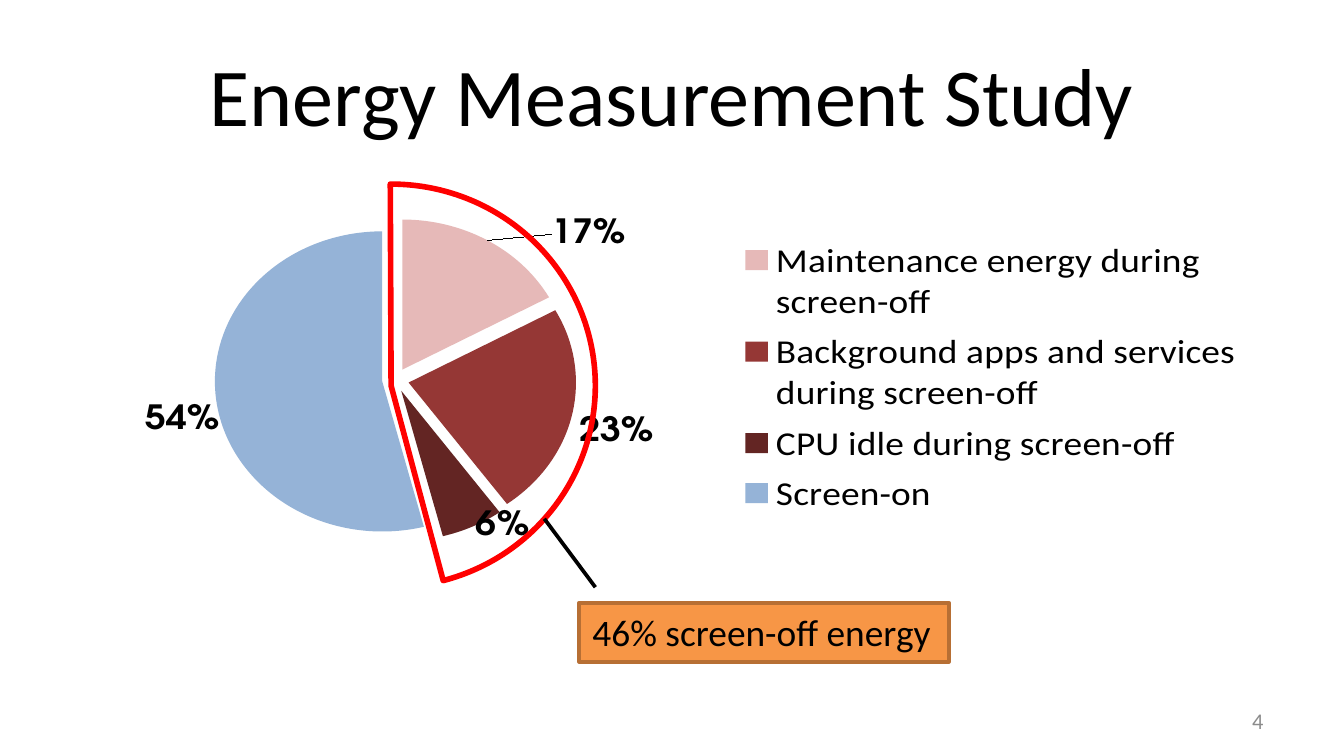
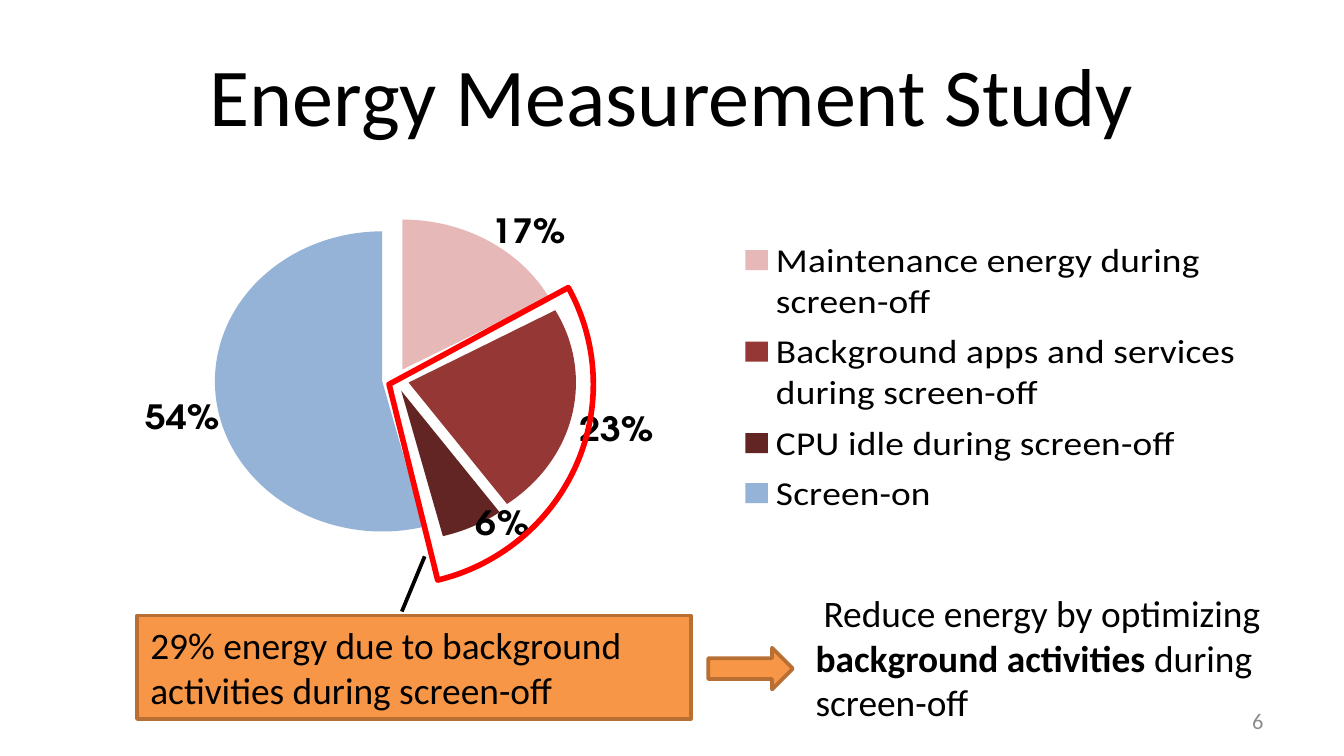
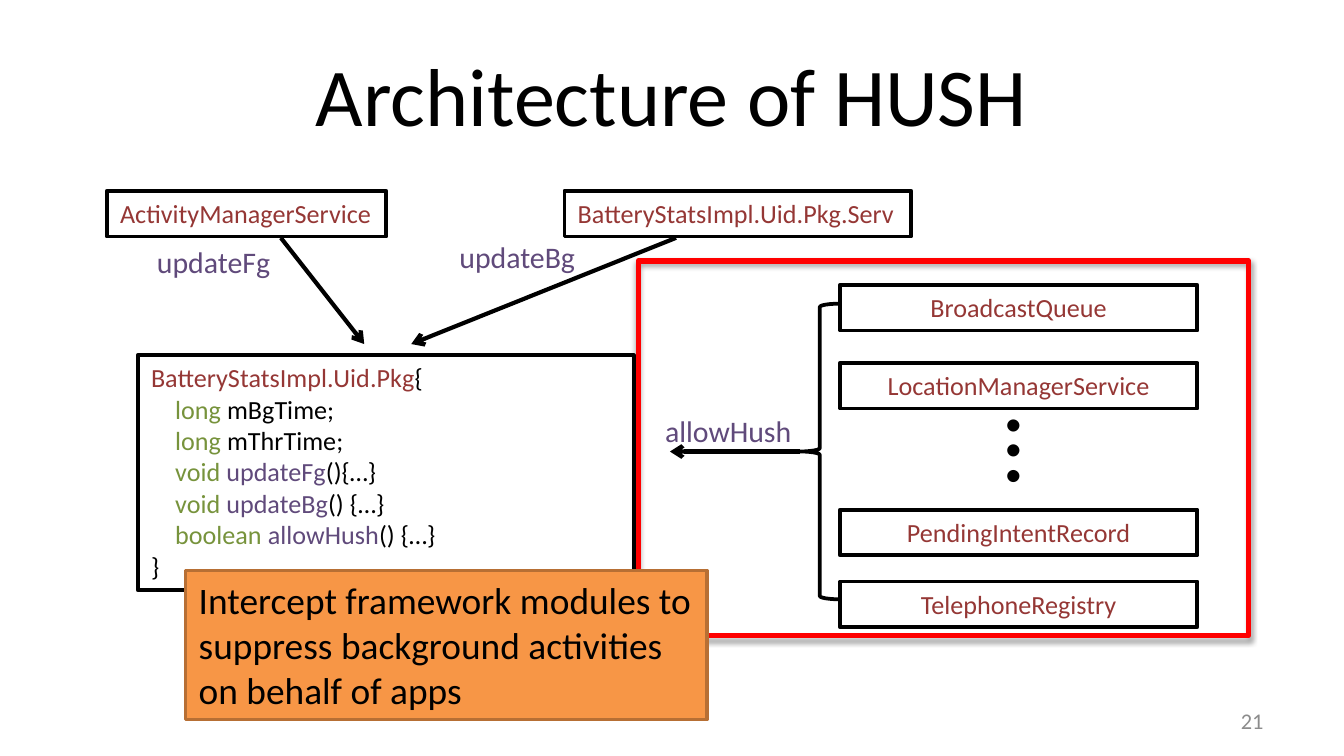
import lxml.etree
import pptx
import pptx.chart.data
import pptx.dml.color
import pptx.enum.chart
import pptx.enum.shapes
import pptx.enum.text
import pptx.oxml
import pptx.oxml.ns
import pptx.util

SHAPE = pptx.enum.shapes.MSO_SHAPE
ALIGN = pptx.enum.text.PP_ALIGN
ANCHOR = pptx.enum.text.MSO_ANCHOR
qn = pptx.oxml.ns.qn

COLORS = {
    "ink": "000000", "paper": "FFFFFF", "number": "8C8C8C",
    "callout": "F79646", "callout_edge": "B76F34", "highlight": "FF0000",
    "class": "953735", "method": "604A7B", "type": "77933C",
    "maintenance": "E6B9B8", "background": "953735", "idle": "632523", "screen_on": "95B3D7",
}
FONT = "Calibri"
LABEL_FONT = "TeX Gyre Adventor"
CELL = 0.1
COLUMNS, ROWS = 100, 56.25
TITLE_AREA = (5, 2.3, 90, 9.4)
NUMBER_AREA = (71.7, 52.1, 23.3, 3)
ENERGY = [
    ("Maintenance energy during screen-off", 17, "maintenance"),
    ("Background apps and services during screen-off", 23, "background"),
    ("CPU idle during screen-off", 6, "idle"),
    ("Screen-on", 54, "screen_on"),
]


def grid(*cells):
    return [pptx.util.Inches(cell * CELL) for cell in cells]


def color(name):
    return pptx.dml.color.RGBColor.from_string(COLORS[name])


def style_font(font, size, ink="ink", bold=False, name=FONT):
    font.name = name
    font.size = pptx.util.Pt(size)
    font.bold = bold
    font.color.rgb = color(ink)


def paint(shape, fill=None, edge=None, width=2):
    if fill:
        shape.fill.solid()
        shape.fill.fore_color.rgb = color(fill)
    else:
        shape.fill.background()
    if edge:
        shape.line.color.rgb = color(edge)
        shape.line.width = pptx.util.Pt(width)
    else:
        shape.line.fill.background()


def write(box, text, size, ink="ink", align=ALIGN.LEFT, wrap=True, anchor=ANCHOR.TOP):
    frame = box.text_frame
    frame.text = text
    frame.word_wrap = wrap
    frame.vertical_anchor = anchor
    para = frame.paragraphs[0]
    para.alignment = align
    for span in para.runs:
        style_font(span.font, size, ink)


def write_spans(para, spans, size):
    para.alignment = ALIGN.LEFT
    for text, ink, bold in spans:
        span = para.add_run()
        span.text = text
        style_font(span.font, size, ink, bold)


def indent(para, **lengths):
    properties = para._p.get_or_add_pPr()
    for name, inches in lengths.items():
        properties.set(name, str(pptx.util.Inches(inches)))


def add_shape(page, kind, area, fill=None, edge="ink", width=2):
    shape = page.shapes.add_shape(kind, *grid(*area))
    shape.shadow.inherit = False
    paint(shape, fill, edge, width)
    return shape


def add_label(page, area, text, size, ink="ink", **layout):
    box = page.shapes.add_textbox(*grid(*area))
    write(box, text, size, ink, **layout)
    return box


def add_callout(page, area, text, wrap=True):
    box = add_shape(page, SHAPE.RECTANGLE, area, "callout", "callout_edge")
    write(box, text, 20, wrap=wrap)


def add_class_box(page, area, name, align=ALIGN.LEFT, wrap=False):
    box = add_shape(page, SHAPE.RECTANGLE, area, "paper")
    write(box, name, 14, "class", align, wrap)


def add_wedge(page, area, start, end):
    wedge = add_shape(page, SHAPE.PIE, area, edge="highlight", width=3)
    wedge.adjustments[0] = start
    wedge.adjustments[1] = end


def add_line(page, start, end, width=2, arrow=False):
    line = page.shapes.add_connector(
        pptx.enum.shapes.MSO_CONNECTOR.STRAIGHT, *grid(*start, *end))
    line.line.color.rgb = color("ink")
    line.line.width = pptx.util.Pt(width)
    if arrow:
        tail = lxml.etree.SubElement(line.line._get_or_add_ln(), qn("a:tailEnd"))
        tail.set("type", "arrow")
    lxml.etree.SubElement(line._element.spPr, qn("a:effectLst"))
    return line


def add_shadow(shape):
    effects = shape._element.spPr.find(qn("a:effectLst"))
    shadow = lxml.etree.SubElement(
        effects, qn("a:outerShdw"), blurRad=str(pptx.util.Pt(3.1)),
        dist=str(pptx.util.Pt(1.8)), dir="5400000", rotWithShape="0")
    tint = lxml.etree.SubElement(shadow, qn("a:srgbClr"), val=COLORS["ink"])
    lxml.etree.SubElement(tint, qn("a:alpha"), val="35000")


def add_page(deck, title, number):
    page = deck.slides.add_slide(deck.slide_layouts[5])
    heading = page.shapes.title
    heading.left, heading.top, heading.width, heading.height = grid(*TITLE_AREA)
    write(heading, title, 44, align=ALIGN.CENTER, anchor=ANCHOR.MIDDLE)
    add_label(page, NUMBER_AREA, str(number), 12, "number",
              align=ALIGN.RIGHT, anchor=ANCHOR.MIDDLE)
    return page


def chart_layout(**values):
    layout = pptx.oxml.parse_xml(
        '<c:layout xmlns:c="http://schemas.openxmlformats.org/drawingml/2006/chart">'
        "<c:manualLayout/></c:layout>")
    for name, value in values.items():
        lxml.etree.SubElement(layout[0], qn("c:" + name)).set("val", str(value))
    return layout


def place_plot(chart):
    plot_area = chart._chartSpace.chart.plotArea
    for layout in plot_area.findall(qn("c:layout")):
        plot_area.remove(layout)
    plot_area.insert(0, chart_layout(
        layoutTarget="inner", xMode="edge", yMode="edge", x=0.096, y=0, w=0.328, h=1))


def place_legend(legend):
    for layout in legend._element.findall(qn("c:layout")):
        legend._element.remove(layout)
    legend._element.find(qn("c:legendPos")).addnext(chart_layout(
        xMode="edge", yMode="edge", x=0.54, y=0.04, w=0.44, h=0.9))


def explode(parent, before, percent):
    explosion = parent.makeelement(qn("c:explosion"), {"val": str(percent)})
    parent.find(qn(before)).addprevious(explosion)


def shift_label(series, index, x, y):
    label = series.points[index].data_label
    style_font(label.font, 20, bold=True, name=LABEL_FONT)
    label.position = pptx.enum.chart.XL_LABEL_POSITION.OUTSIDE_END
    for element in series._element.find(qn("c:dLbls")).findall(qn("c:dLbl")):
        position = element.find(qn("c:idx"))
        if position.get("val") == str(index):
            element.find(qn("c:showVal")).set("val", "0")
            element.find(qn("c:showPercent")).set("val", "1")
            position.addnext(chart_layout(x=x, y=y))


def add_energy_chart(page, label_shifts):
    data = pptx.chart.data.CategoryChartData()
    data.categories = [name for name, _, _ in ENERGY]
    data.add_series("Series 1", [share for _, share, _ in ENERGY])
    chart = page.shapes.add_chart(
        pptx.enum.chart.XL_CHART_TYPE.PIE, *grid(6.4, 15.1, 88.6, 26.9), data).chart
    style_font(chart.font, 18)
    chart.has_title = False
    chart.has_legend = True
    chart.legend.position = pptx.enum.chart.XL_LEGEND_POSITION.RIGHT
    chart.legend.include_in_layout = False
    style_font(chart.legend.font, 20)
    place_plot(chart)
    place_legend(chart.legend)

    plot = chart.plots[0]
    plot.vary_by_categories = True
    series = plot.series[0]
    for index, (_, _, ink) in enumerate(ENERGY):
        fill = series.points[index].format.fill
        fill.solid()
        fill.fore_color.rgb = color(ink)
    for point in series._element.findall(qn("c:dPt")):
        explode(point, "c:spPr", 8)
    explode(series._element, "c:dPt", 8)

    labels = series.data_labels
    labels.show_value = False
    labels.show_percentage = True
    labels.number_format = "0%"
    labels.number_format_is_linked = False
    labels.position = pptx.enum.chart.XL_LABEL_POSITION.OUTSIDE_END
    style_font(labels.font, 20, bold=True, name=LABEL_FONT)
    for index, (x, y) in label_shifts.items():
        shift_label(series, index, x, y)


def add_class_listing(page):
    box = add_shape(page, SHAPE.RECTANGLE, (10.25, 26.42, 36.9, 17.5), "paper")
    frame = box.text_frame
    frame.word_wrap = True
    frame.vertical_anchor = ANCHOR.TOP
    members = [
        ("long ", "", "mBgTime;"),
        ("long ", "", "mThrTime;"),
        ("void ", "updateFg", "(){…}"),
        ("void ", "updateBg", "() {…}"),
        ("boolean ", "allowHush", "() {…}"),
    ]
    write_spans(frame.paragraphs[0], [
        ("BatteryStatsImpl.Uid.Pkg", "class", False), ("{", "ink", False)], 14)
    for member in members:
        para = frame.add_paragraph()
        spans = zip(member, ("type", "method", "ink"))
        write_spans(para, [(text, ink, False) for text, ink in spans if text], 14)
        indent(para, marL=0.18)
    write_spans(frame.add_paragraph(), [("}", "ink", False)], 14)


def build_screen_off(deck):
    page = add_page(deck, "Energy Measurement Study", 4)
    add_energy_chart(page, {0: (0.05, 0), 3: (0.01, 0.01)})
    add_wedge(page, (13.9, 13.7, 30.4, 30), 161.87, 45.01)
    add_callout(page, (43.1, 44.85, 27.5, 4.4), "46% screen-off energy", wrap=False)
    add_line(page, (44.3, 43.7), (40.5, 38.6))


def build_background(deck):
    page = add_page(deck, "Energy Measurement Study", 6)
    add_energy_chart(page, {3: (0.01, 0.01)})
    add_wedge(page, (13.75, 13.6, 30.4, 30), 198.99, 45.63)
    add_callout(page, (10.2, 45.8, 41.2, 7.7),
                "29% energy due to background activities during screen-off")
    add_line(page, (29.9, 45.5), (31.6, 41.4))
    advice = page.shapes.add_textbox(*grid(59.7, 43.4, 40.3, 11.1))
    advice.text_frame.word_wrap = True
    para = advice.text_frame.paragraphs[0]
    write_spans(para, [
        ("Reduce energy by optimizing ", "ink", False),
        ("background activities ", "ink", True),
        ("during screen-off", "ink", False)], 20)
    indent(para, marL=0, indent=0.06)
    add_shape(page, SHAPE.RIGHT_ARROW, (52.7, 48.2, 6.3, 3.1), "callout", "callout_edge")


def build_architecture(deck):
    page = add_page(deck, "Architecture of HUSH", 21)
    add_label(page, (48.5, 30.2, 11.5, 3.7), "allowHush", 16, "method", wrap=False)
    modules = [("BroadcastQueue", 21.2), ("LocationManagerService", 27),
               ("PendingIntentRecord", 37.93), ("TelephoneRegistry", 43.27)]
    for name, top in modules:
        add_class_box(page, (62.5, top, 26.6, 3.4), name, ALIGN.CENTER, wrap=True)
    dots = add_label(page, (74.35, 28.55, 7.2, 10.1), "…", 54, wrap=False)
    dots.rotation = 90
    brace = add_shape(page, SHAPE.LEFT_BRACE, (59.5, 22.6, 3, 22))
    call = add_line(page, (59.5, 33.6), (49.85, 33.6), 2.25, arrow=True)
    call.begin_connect(brace, 1)

    add_class_listing(page)
    add_class_box(page, (7.95, 14.2, 20.8, 3.4), "ActivityManagerService")
    add_class_box(page, (42, 14.2, 25.8, 3.4), "BatteryStatsImpl.Uid.Pkg.Serv")
    for start, end in ((20.9, 27.1), (50.3, 30.6)):
        add_line(page, (start, 17.7), (end, 25.6), 2.25, arrow=True)
    add_label(page, (33.2, 17.3, 10.8, 3.7), "updateBg", 16, "method", wrap=False)
    add_label(page, (10.7, 17.65, 10.6, 3.7), "updateFg", 16, "method", wrap=False)

    frame = add_shape(page, SHAPE.RECTANGLE, (47.5, 19.4, 45.4, 27.9),
                      edge="highlight", width=3)
    add_shadow(frame)
    add_callout(page, (13.8, 42.45, 38.8, 11.1),
                "Intercept framework modules to suppress background activities on behalf of apps")


def main():
    deck = pptx.Presentation()
    deck.slide_width, deck.slide_height = grid(COLUMNS, ROWS)
    build_screen_off(deck)
    build_background(deck)
    build_architecture(deck)
    deck.save("out.pptx")


if __name__ == "__main__":
    main()
